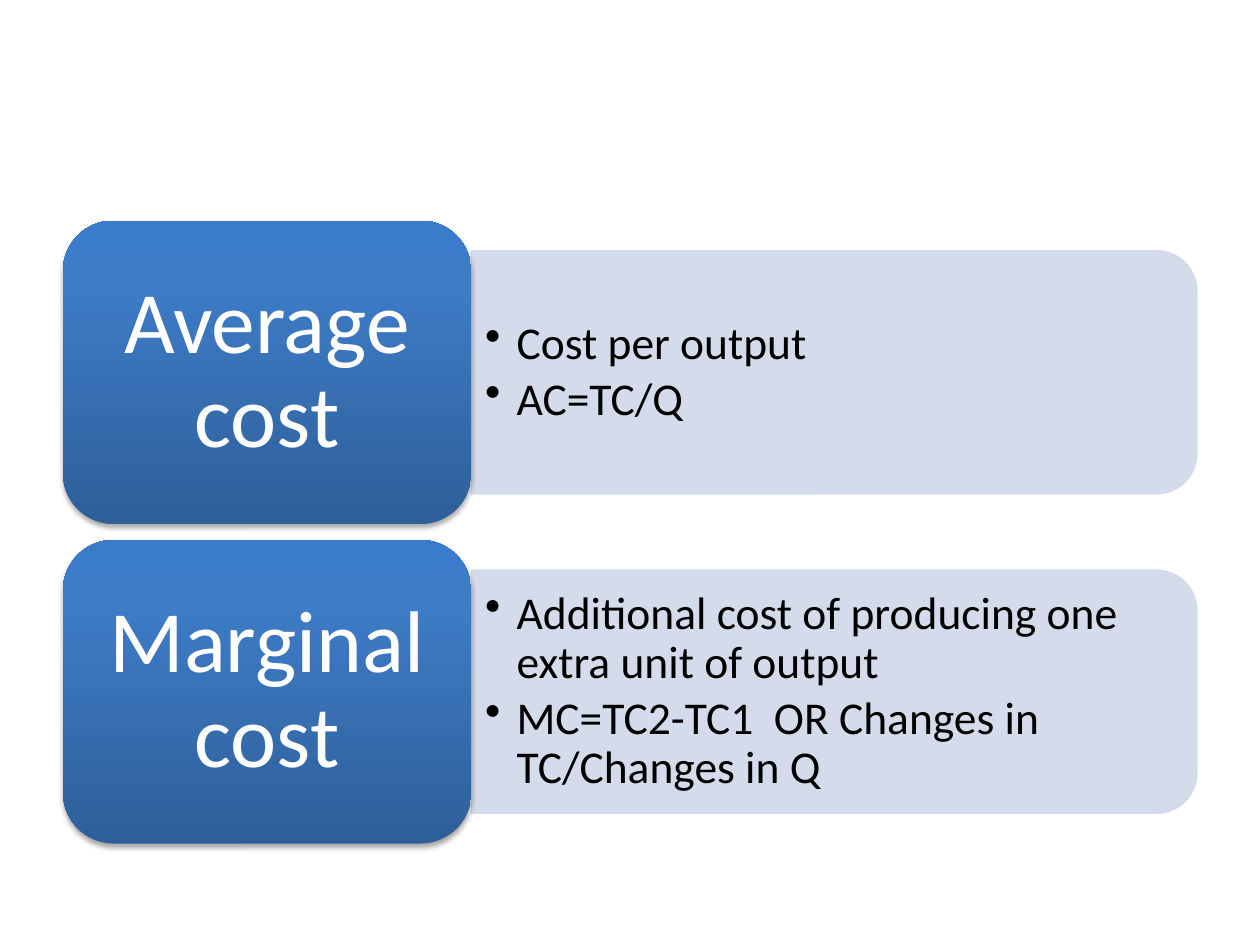
"""Build a slide that sets average cost beside marginal cost."""
from dataclasses import dataclass

from lxml.etree import SubElement
from pptx import Presentation
from pptx.dml.color import RGBColor
from pptx.enum.shapes import MSO_SHAPE
from pptx.enum.text import MSO_ANCHOR, PP_ALIGN
from pptx.oxml import parse_xml
from pptx.oxml.ns import nsdecls, qn
from pptx.util import Inches, Pt

COLORS = {
    "panel": "D0D8E8",
    "body": "000000",
    "label": "FFFFFF",
    "shadow": "000000",
    "bottom": "2F5F99",
    "middle": "3D7CC7",
    "top": "3A7CCB",
}
FONT = "Calibri"
LEFT, TOP, PITCH = 0.5, 1.75, 2.535
LABEL_WIDTH, LABEL_HEIGHT = 3.24, 2.41
PANEL_WIDTH, PANEL_HEIGHT = 5.76, 1.93
TEXT_WIDTH, TEXT_HEIGHT = 5.67, 1.74


@dataclass(frozen=True)
class Cost:
    """A kind of cost and the points that explain it."""
    name: str
    points: tuple[str, ...]


COSTS = (
    Cost("Average cost", ("Cost per output", "AC=TC/Q")),
    Cost("Marginal cost", (
        "Additional cost of producing one extra unit of output",
        "MC=TC2-TC1  OR Changes in TC/Changes in Q",
    )),
)


def write_text(frame, lines, *, size: float, color: str, inset: tuple[float, float],
               after: float, align=PP_ALIGN.LEFT, bullets: bool = False) -> None:
    """Fill a text frame with one paragraph per line."""
    frame.word_wrap = True
    frame.vertical_anchor = MSO_ANCHOR.MIDDLE
    frame.margin_left = frame.margin_right = Inches(inset[0])
    frame.margin_top = frame.margin_bottom = Inches(inset[1])
    for index, line in enumerate(lines):
        para = frame.add_paragraph() if index else frame.paragraphs[0]
        para.alignment = align
        para.line_spacing = 0.9
        para.space_after = Pt(size * after)
        span = para.add_run()
        span.text = line
        span.font.name = FONT
        span.font.size = Pt(size)
        span.font.color.rgb = RGBColor.from_string(COLORS[color])
        if bullets:
            para.level = 1
            properties = para._p.get_or_add_pPr()
            properties.set("marL", str(Inches(0.25)))
            properties.set("indent", str(-Inches(0.25)))
            SubElement(properties, qn("a:buChar"), char="•")


def add_panel(page, middle: float) -> None:
    """Draw the pale panel, rounded on its right side only."""
    center = LEFT + LABEL_WIDTH + PANEL_WIDTH / 2
    panel = page.shapes.add_shape(
        MSO_SHAPE.ROUND_2_SAME_RECTANGLE,
        Inches(center - PANEL_HEIGHT / 2), Inches(middle - PANEL_WIDTH / 2),
        Inches(PANEL_HEIGHT), Inches(PANEL_WIDTH))
    panel.rotation = 90
    panel.shadow.inherit = False
    panel.fill.solid()
    panel.line.width = Pt(0.75)
    for paint in (panel.fill.fore_color, panel.line.color):
        paint.rgb = RGBColor.from_string(COLORS["panel"])
    for color in panel._element.spPr.iter(qn("a:srgbClr")):
        SubElement(color, qn("a:alpha"), val="90000")


def add_points(page, middle: float, points: tuple[str, ...]) -> None:
    """Write the bulleted points over the panel."""
    box = page.shapes.add_textbox(
        Inches(LEFT + LABEL_WIDTH), Inches(middle - TEXT_HEIGHT / 2),
        Inches(TEXT_WIDTH), Inches(TEXT_HEIGHT))
    write_text(box.text_frame, points, size=26, color="body", inset=(0.11, 0.05),
               after=0.15, bullets=True)


def add_label(page, middle: float, name: str) -> None:
    """Draw the shaded block that names the cost."""
    label = page.shapes.add_shape(
        MSO_SHAPE.ROUNDED_RECTANGLE,
        Inches(LEFT), Inches(middle - LABEL_HEIGHT / 2),
        Inches(LABEL_WIDTH), Inches(LABEL_HEIGHT))
    label.line.fill.background()
    label.shadow.inherit = False
    stops = "".join(
        f'<a:gs pos="{place * 1000}"><a:srgbClr val="{COLORS[key]}"/></a:gs>'
        for place, key in ((0, "bottom"), (80, "middle"), (100, "top")))
    properties = label._element.spPr
    properties.find(qn("a:prstGeom")).addnext(parse_xml(
        f'<a:gradFill {nsdecls("a")} rotWithShape="1"><a:gsLst>{stops}</a:gsLst>'
        '<a:lin ang="16200000" scaled="0"/></a:gradFill>'))
    properties.find(qn("a:effectLst")).append(parse_xml(
        f'<a:outerShdw {nsdecls("a")} blurRad="{Pt(3.1)}" dist="{Pt(1.8)}" '
        f'dir="5400000" rotWithShape="0"><a:srgbClr val="{COLORS["shadow"]}">'
        '<a:alpha val="35000"/></a:srgbClr></a:outerShdw>'))
    write_text(label.text_frame, (name,), size=50, color="label", inset=(0.21, 0.1),
               after=0.35, align=PP_ALIGN.CENTER)


def main() -> None:
    """Build and save the deck."""
    deck = Presentation()
    deck.slide_width, deck.slide_height = Inches(10), Inches(7.5)
    page = deck.slides.add_slide(deck.slide_layouts[6])
    for row, cost in enumerate(COSTS):
        middle = TOP + LABEL_HEIGHT / 2 + row * PITCH
        add_panel(page, middle)
        add_points(page, middle, cost.points)
        add_label(page, middle, cost.name)
    deck.save("out.pptx")


if __name__ == "__main__":
    main()
